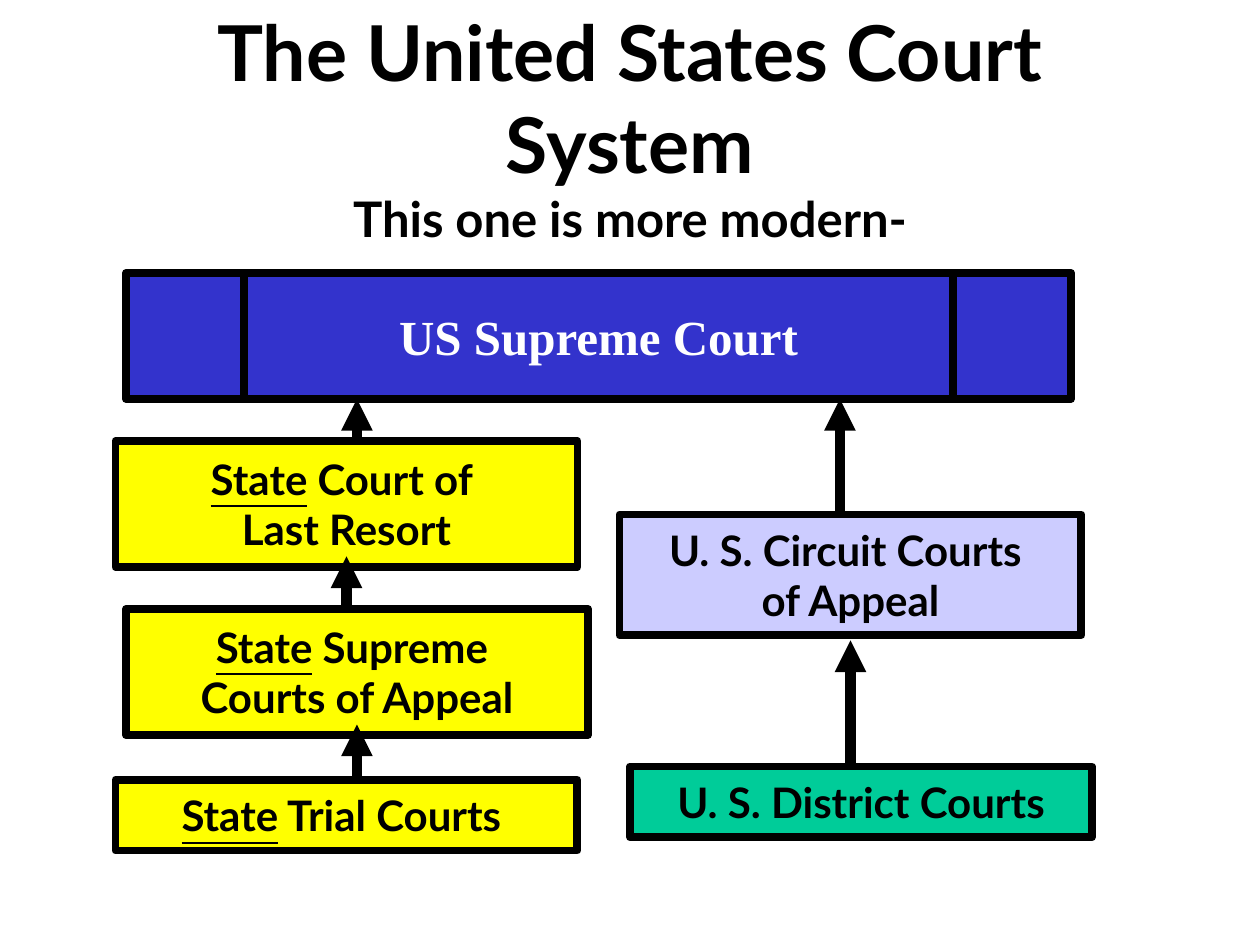
from dataclasses import dataclass

from lxml import etree
from pptx import Presentation
from pptx.dml.color import RGBColor
from pptx.enum.shapes import MSO_CONNECTOR, MSO_SHAPE
from pptx.enum.text import MSO_ANCHOR, MSO_AUTO_SIZE, PP_ALIGN
from pptx.oxml.ns import qn
from pptx.util import Inches, Pt

STRAIGHT = MSO_CONNECTOR.STRAIGHT
PREDEFINED = MSO_SHAPE.FLOWCHART_PREDEFINED_PROCESS
PROCESS = MSO_SHAPE.FLOWCHART_PROCESS
RECTANGLE = MSO_SHAPE.RECTANGLE
MIDDLE = MSO_ANCHOR.MIDDLE
FIT_SHAPE = MSO_AUTO_SIZE.SHAPE_TO_FIT_TEXT
NO_FIT = MSO_AUTO_SIZE.NONE
CENTER = PP_ALIGN.CENTER

COLORS = {
    "ink": "000000",
    "paper": "FFFFFF",
    "supreme": "3333CC",
    "state": "FFFF00",
    "circuit": "CCCCFF",
    "district": "00CC99",
}
WIDTH, HEIGHT = Inches(10), Inches(7.5)
COLUMNS, ROWS = 120, 90
COURT_WIDTH = 44
STATE_LEFT = 11
UNDERLINED = "State"


@dataclass(frozen=True)
class Court:
    text: str
    fill: str
    left: float
    top: float
    width: float
    height: float
    kind: int = RECTANGLE
    font: str = "Lato"
    size: int = 24
    ink: str = "ink"


@dataclass(frozen=True)
class Appeal:
    column: float
    start: float
    end: float


FLOW = [
    Court("US Supreme Court", "supreme", 12, 26, 90, 12, PREDEFINED, "Times New Roman", 28, "paper"),
    Court("State Supreme \nCourts of Appeal", "state", 12, 58, COURT_WIDTH, 12, PROCESS),
    Appeal(34, 49, 38),
    Appeal(80, 49, 38),
    Court("U. S. Circuit Courts \vof Appeal", "circuit", 59, 49, COURT_WIDTH, 11.5),
    Court("U. S. District Courts", "district", 60, 73, COURT_WIDTH, 6.75),
    Appeal(81, 73, 61),
    Court("State Trial Courts ", "state", STATE_LEFT, 74.25, COURT_WIDTH, 6.75),
    Appeal(34, 74, 69),
    Court("State Court of \vLast Resort", "state", STATE_LEFT, 42, COURT_WIDTH, 12, PROCESS),
    Appeal(33, 58, 53),
]


def x(column: float) -> int:
    return round(WIDTH * column / COLUMNS)


def y(row: float) -> int:
    return round(HEIGHT * row / ROWS)


def color(name: str) -> RGBColor:
    return RGBColor.from_string(COLORS[name])


def format_run(run, font: str, size: int, ink: str) -> None:
    run.font.name = font
    run.font.size = Pt(size)
    run.font.bold = True
    run.font.color.rgb = color(ink)


def write_paragraph(paragraph, text: str) -> None:
    if not text.startswith(UNDERLINED):
        paragraph.text = text
        return
    paragraph.text = UNDERLINED
    paragraph.runs[0].font.underline = True
    for index, line in enumerate(text.removeprefix(UNDERLINED).split("\v")):
        if index:
            paragraph.add_line_break()
        paragraph.add_run().text = line


def draw_court(slide, court: Court) -> None:
    box = slide.shapes.add_shape(
        court.kind, x(court.left), y(court.top), x(court.width), y(court.height)
    )
    box.shadow.inherit = False
    box.fill.solid()
    box.fill.fore_color.rgb = color(court.fill)
    box.line.color.rgb = color("ink")
    box.line.width = Pt(4.5)
    frame = box.text_frame
    frame.vertical_anchor = MIDDLE
    frame.word_wrap = court.kind == RECTANGLE
    frame.auto_size = FIT_SHAPE if court.kind == RECTANGLE else NO_FIT
    for index, text in enumerate(court.text.split("\n")):
        paragraph = frame.add_paragraph() if index else frame.paragraphs[0]
        write_paragraph(paragraph, text)
        paragraph.alignment = CENTER
        for run in paragraph.runs:
            format_run(run, court.font, court.size, court.ink)


def draw_appeal(slide, appeal: Appeal) -> None:
    arrow = slide.shapes.add_connector(
        STRAIGHT, x(appeal.column), y(appeal.start), x(appeal.column), y(appeal.end)
    )
    arrow.line.color.rgb = color("ink")
    arrow.line.width = Pt(6)
    properties = arrow.line._get_or_add_ln()
    etree.SubElement(properties, qn("a:tailEnd"), type="triangle")
    etree.SubElement(arrow._element.spPr, qn("a:effectLst"))


def write_title(slide) -> None:
    title = slide.shapes.title
    title.left, title.top, title.width, title.height = x(8), y(3), x(104), y(18)
    frame = title.text_frame
    frame.text = "The United States Court System\vThis one is more modern-"
    frame.word_wrap = True
    frame.auto_size = NO_FIT
    frame.vertical_anchor = MIDDLE
    heading = frame.paragraphs[0]
    heading.alignment = CENTER
    for run, size in zip(heading.runs, (44, 28)):
        format_run(run, "Lato", size, "ink")


def main() -> None:
    deck = Presentation()
    deck.slide_width, deck.slide_height = WIDTH, HEIGHT
    slide = deck.slides.add_slide(deck.slide_layouts[5])
    write_title(slide)
    for part in FLOW:
        if isinstance(part, Court):
            draw_court(slide, part)
        else:
            draw_appeal(slide, part)
    deck.save("out.pptx")


if __name__ == "__main__":
    main()
